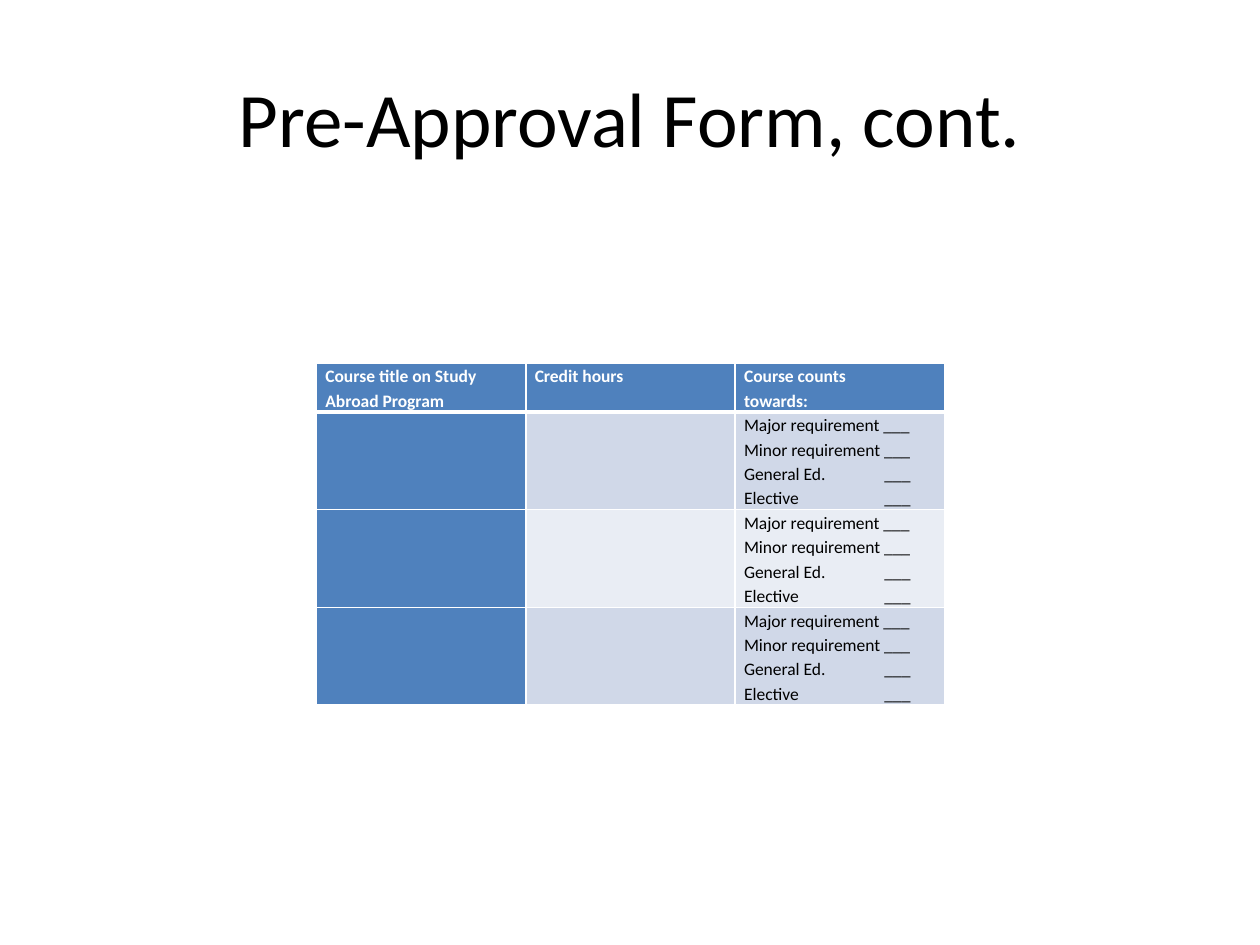
from lxml import etree
from pptx import Presentation
from pptx.dml.color import RGBColor
from pptx.enum.text import MSO_ANCHOR, PP_ALIGN
from pptx.oxml.ns import qn
from pptx.util import Cm, Pt

MIDDLE = MSO_ANCHOR.MIDDLE
TOP = MSO_ANCHOR.TOP
CENTER = PP_ALIGN.CENTER
WHITE, BLACK, BLUE = "FFFFFF", "000000", "4F81BD"
BANDS = ["D0D8E8", "E9EDF4", "D0D8E8"]


def format_text(paragraph, size, color, bold=False):
    values = {"name": "Calibri", "size": Pt(size), "bold": bold}
    for name, value in values.items():
        setattr(paragraph.font, name, value)
    paragraph.font.color.rgb = RGBColor.from_string(color)


def add_borders(cell, bottom_width):
    properties = cell._tc.get_or_add_tcPr()
    widths = {"a:lnL": 1, "a:lnR": 1, "a:lnT": 1, "a:lnB": bottom_width}
    for position, (tag, width) in enumerate(widths.items()):
        line = etree.Element(qn(tag), w=str(Pt(width)))
        fill = etree.SubElement(line, qn("a:solidFill"))
        etree.SubElement(fill, qn("a:srgbClr"), val=WHITE)
        properties.insert(position, line)


presentation = Presentation()
presentation.slide_width = Cm(25.4)
presentation.slide_height = Cm(19.05)
slide = presentation.slides.add_slide(presentation.slide_layouts[5])

title = slide.shapes.title
title_box = {"left": 1.27, "top": 0.76, "width": 22.86, "height": 3.18}
for name, value in title_box.items():
    setattr(title, name, Cm(value))
title.text_frame.text = "Pre-Approval Form, cont."
title.text_frame.vertical_anchor = MIDDLE
title.text_frame.paragraphs[0].alignment = CENTER
format_text(title.text_frame.paragraphs[0], 44, BLACK)

headers = ["Course title on Study Abroad Program", "Credit hours", "Course counts\ntowards:"]
requirements = "Major requirement ___\nMinor requirement ___\nGeneral Ed.\t___\nElective\t___"
rows = [headers] + [["", "", requirements] for band in BANDS]
row_heights = [0.95] + [1.95] * len(BANDS)

table = slide.shapes.add_table(
    len(rows), len(headers), Cm(6.38), Cm(7.32), Cm(12.66), Cm(sum(row_heights))
).table
for column in table.columns:
    column.width = Cm(4.22)
for row, height in zip(table.rows, row_heights):
    row.height = Cm(height)

cell_format = {
    "margin_left": Cm(0.18),
    "margin_right": Cm(0.18),
    "margin_top": 0,
    "margin_bottom": 0,
    "vertical_anchor": TOP,
}
for row_index, texts in enumerate(rows):
    is_header = row_index == 0
    for column_index, text in enumerate(texts):
        cell = table.cell(row_index, column_index)
        for name, value in cell_format.items():
            setattr(cell, name, value)
        is_blue = is_header or column_index == 0
        cell.fill.solid()
        cell.fill.fore_color.rgb = RGBColor.from_string(BLUE if is_blue else BANDS[row_index - 1])
        add_borders(cell, 3 if is_header else 1)
        cell.text_frame.text = text
        for paragraph in cell.text_frame.paragraphs:
            paragraph.line_spacing = 1.15
            format_text(paragraph, 10, WHITE if is_blue else BLACK, is_header)
            if "\t" in text:
                properties = paragraph._p.get_or_add_pPr()
                tabs = etree.Element(qn("a:tabLst"))
                etree.SubElement(tabs, qn("a:tab"), pos=str(Cm(2.83)), algn="l")
                properties.find(qn("a:defRPr")).addprevious(tabs)

presentation.save("out.pptx")
